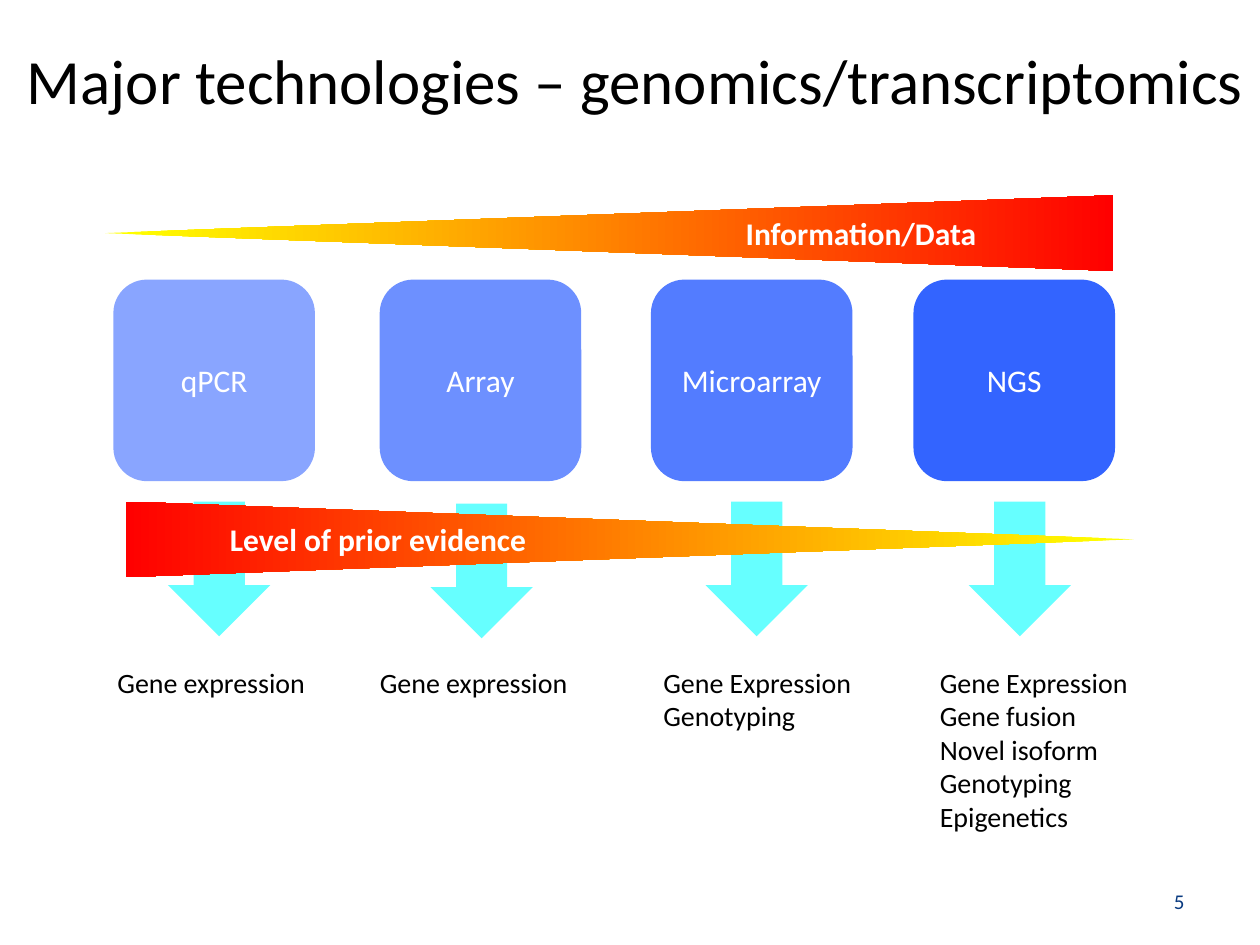
from dataclasses import dataclass

from pptx import Presentation
from pptx.dml.color import RGBColor
from pptx.enum.shapes import MSO_SHAPE
from pptx.enum.text import MSO_ANCHOR, MSO_AUTO_SIZE, PP_ALIGN
from pptx.util import Pt


@dataclass(frozen=True)
class Theme:
    """Font, type sizes and colours of the slide."""
    font: str = "Calibri"
    title_size: int = 36
    shape_size: int = 18
    list_size: int = 16
    number_size: int = 12
    text: str = "000000"
    inverse: str = "FFFFFF"
    number: str = "093A80"
    arrow: str = "66FFFF"
    wedge_tip: str = "FFFF00"
    wedge_base: str = "FF0000"


@dataclass(frozen=True)
class Box:
    """A rectangle in points."""
    left: float
    top: float
    width: float
    height: float

    def lengths(self):
        """Return the four lengths for python-pptx."""
        return Pt(self.left), Pt(self.top), Pt(self.width), Pt(self.height)


@dataclass(frozen=True)
class Technology:
    """One technology with its colour, outputs and horizontal places."""
    name: str
    color: str
    outputs: tuple
    card_left: float
    arrow_left: float
    list_left: float
    arrow_drop: float = 0


THEME = Theme()
TECHNOLOGIES = (
    Technology("qPCR", "89A5FF", ("Gene expression",), 64.8, 96, 60),
    Technology("Array", "6D90FF", ("Gene expression",), 217, 246, 210, 1.2),
    Technology("Microarray", "537CFF", ("Gene Expression", "Genotyping"), 372, 403.2, 372),
    Technology("NGS", "3364FF",
               ("Gene Expression", "Gene fusion", "Novel isoform", "Genotyping", "Epigenetics"),
               522, 553.5, 530),
)


def write_lines(text_frame, lines, size, color, alignment=PP_ALIGN.LEFT, bold=False):
    """Fill a text frame with one paragraph per line."""
    text_frame.text = "\n".join(lines)
    for paragraph in text_frame.paragraphs:
        paragraph.alignment = alignment
        paragraph.font.name = THEME.font
        paragraph.font.size = Pt(size)
        paragraph.font.bold = bold
        paragraph.font.color.rgb = RGBColor.from_string(color)


def add_plain_shape(slide, preset, box):
    """Add a preset shape without outline or shadow."""
    shape = slide.shapes.add_shape(preset, *box.lengths())
    shape.shadow.inherit = False
    shape.line.fill.background()
    shape.text_frame.vertical_anchor = MSO_ANCHOR.MIDDLE
    return shape


def add_filled_shape(slide, preset, box, color):
    """Add a plain shape in one colour."""
    shape = add_plain_shape(slide, preset, box)
    shape.fill.solid()
    shape.fill.fore_color.rgb = RGBColor.from_string(color)
    return shape


def add_title(slide, box, title):
    """Place the title placeholder in the box."""
    shape = slide.shapes.title
    shape.left, shape.top, shape.width, shape.height = box.lengths()
    shape.text_frame.auto_size = MSO_AUTO_SIZE.NONE
    shape.text_frame.vertical_anchor = MSO_ANCHOR.MIDDLE
    write_lines(shape.text_frame, [title], THEME.title_size, THEME.text, PP_ALIGN.CENTER)


def add_technology(slide, box, technology):
    """Stack card, arrow and output list down the box."""
    arrow_box = Box(technology.arrow_left, box.top + 126.8 + technology.arrow_drop, 58.5, 77)
    add_filled_shape(slide, MSO_SHAPE.DOWN_ARROW, arrow_box, THEME.arrow)

    card_box = Box(box.left, box.top, box.width, box.width)
    card = add_filled_shape(slide, MSO_SHAPE.ROUNDED_RECTANGLE, card_box, technology.color)
    write_lines(card.text_frame, [technology.name], THEME.shape_size, THEME.inverse,
                PP_ALIGN.CENTER)

    list_height = 7.2 + 19.4 * len(technology.outputs)
    list_box = Box(technology.list_left, box.top + box.height - 104.4, 123, list_height)
    outputs = slide.shapes.add_textbox(*list_box.lengths())
    outputs.text_frame.word_wrap = False
    outputs.text_frame.auto_size = MSO_AUTO_SIZE.SHAPE_TO_FIT_TEXT
    write_lines(outputs.text_frame, technology.outputs, THEME.list_size, THEME.text)


def add_wedge(slide, box, label, rotation, text_direction):
    """Lay a turned triangle with a gradient along the box."""
    upright = Box(box.left + (box.width - box.height) / 2,
                  box.top + (box.height - box.width) / 2, box.height, box.width)
    wedge = add_plain_shape(slide, MSO_SHAPE.ISOSCELES_TRIANGLE, upright)
    wedge.rotation = rotation
    wedge.fill.gradient()
    wedge.fill.gradient_angle = 270
    stops = ((0.02, THEME.wedge_tip), (1, THEME.wedge_base))
    for stop, (position, color) in zip(wedge.fill.gradient_stops, stops):
        stop.position = position
        stop.color.rgb = RGBColor.from_string(color)
    wedge.element.txBody.bodyPr.set("vert", text_direction)
    write_lines(wedge.text_frame, [label], THEME.shape_size, THEME.inverse,
                PP_ALIGN.CENTER, bold=True)


def add_slide_number(slide, box, number):
    """Write the slide number at the right of the box."""
    shape = slide.shapes.add_textbox(*box.lengths())
    shape.text_frame.word_wrap = True
    shape.text_frame.vertical_anchor = MSO_ANCHOR.MIDDLE
    write_lines(shape.text_frame, [number], THEME.number_size, THEME.number, PP_ALIGN.RIGHT)


def main():
    """Build and save the slide."""
    presentation = Presentation()
    presentation.slide_width, presentation.slide_height = Pt(720), Pt(540)
    slide = presentation.slides.add_slide(presentation.slide_layouts[5])
    add_title(slide, Box(-24, 12.24, 774, 66.24),
              "Major technologies – genomics/transcriptomics")
    for technology in TECHNOLOGIES:
        add_technology(slide, Box(technology.card_left, 159.8, 115.2, 321.2), technology)
    add_wedge(slide, Box(60, 111.6, 576, 43.2), "Information/Data", 270, "vert")
    add_wedge(slide, Box(72, 286.6, 576, 43.2), "Level of prior evidence", 90, "vert270")
    add_slide_number(slide, Box(516, 500.4, 168, 28.8), "5")
    presentation.save("out.pptx")


if __name__ == "__main__":
    main()
